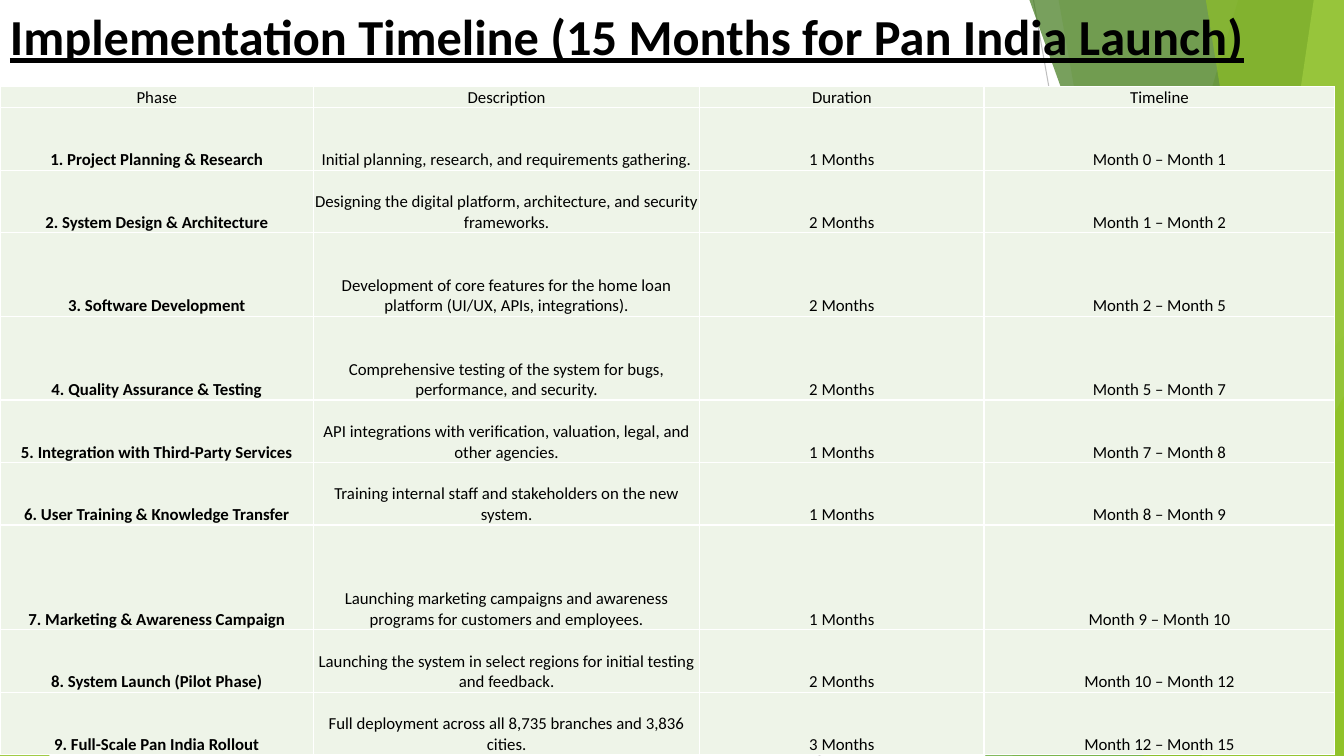
"""Build the implementation timeline slide: green facets, a title and a phase table."""
from lxml.etree import SubElement
from pptx import Presentation
from pptx.dml.color import RGBColor
from pptx.enum.shapes import MSO_CONNECTOR, MSO_SHAPE
from pptx.enum.text import MSO_ANCHOR, PP_ALIGN
from pptx.oxml.ns import qn
from pptx.util import Inches, Pt


def color(hex_string):
    return RGBColor.from_string(hex_string)


def format_font(font, size, bold, underline=False):
    values = {"name": "Calibri", "size": Pt(size), "bold": bold, "underline": underline}
    for name, value in values.items():
        setattr(font, name, value)
    font.color.rgb = color("000000")


presentation = Presentation()
presentation.slide_width = Inches(13.33)
presentation.slide_height = Inches(7.5)
slide = presentation.slides.add_slide(presentation.slide_layouts[6])

guide_lines = [
    ((10.25, 0), (11.58, 7.5), "BFBFBF"),
    ((13.33, 4.03), (8.12, 7.5), "D9D9D9"),
]
for start, end, line_color in guide_lines:
    points = [Inches(value) for value in start + end]
    connector = slide.shapes.add_connector(MSO_CONNECTOR.STRAIGHT, *points)
    connector.line.color.rgb = color(line_color)
    connector.line.width = Pt(0.75)
    SubElement(connector._element.spPr, qn("a:effectLst"))

# Bands give top-left and bottom-left x; triangles give box and apex position.
facets = [
    ("band", (12.28, 10.04), "90C226", 30),
    ("band", (10.5, 11.83), "90C226", 20),
    ("triangle", (9.77, 3.33, 3.56, 4.17, 1), "54A021", 72),
    ("band", (10.21, 12.91), "3F7819", 70),
    ("band", (13.03, 11.92), "C0E474", 70),
    ("band", (11.96, 13.18), "90C226", 65),
    ("triangle", (11.34, 3.93, 1.99, 3.57, 1), "90C226", 80),
    ("triangle", (0, 4.39, 0.49, 3.11, 0), "90C226", 85),
]
for kind, geometry, fill_color, opacity in facets:
    if kind == "band":
        top_x, bottom_x = geometry
        corners = [(13.33, 0), (13.33, 7.5), (bottom_x, 7.5)]
        builder = slide.shapes.build_freeform(Inches(top_x), 0)
        builder.add_line_segments([(Inches(x), Inches(y)) for x, y in corners])
        shape = builder.convert_to_shape()
    else:
        *box, apex = geometry
        shape = slide.shapes.add_shape(
            MSO_SHAPE.ISOSCELES_TRIANGLE, *[Inches(value) for value in box])
        shape.adjustments[0] = apex
    shape.shadow.inherit = False
    shape.line.fill.background()
    shape.fill.solid()
    shape.fill.fore_color.rgb = color(fill_color)
    fill_element = shape._element.spPr.find(qn("a:solidFill"))
    SubElement(fill_element[0], qn("a:alpha"), val=str(opacity * 1000))

title = slide.shapes.add_textbox(0, 0, Inches(13.24), Inches(1.26))
title.text_frame.word_wrap = True
title.text_frame.vertical_anchor = MSO_ANCHOR.TOP
paragraph = title.text_frame.paragraphs[0]
run = paragraph.add_run()
run.text = "Implementation Timeline (15 Months for Pan India Launch)"
format_font(run.font, 36, True, True)

column_widths = [3.11, 3.83, 2.82, 3.48]
row_heights = [0.21, 0.62, 0.62, 0.83, 0.83, 0.62, 0.62, 1.04, 0.62, 0.62]
timeline_rows = [
    ("Phase", "Description", "Duration", "Timeline"),
    ("1. Project Planning & Research",
     "Initial planning, research, and requirements gathering.",
     "1 Months", "Month 0 – Month 1"),
    ("2. System Design & Architecture",
     "Designing the digital platform, architecture, and security frameworks.",
     "2 Months", "Month 1 – Month 2"),
    ("3. Software Development",
     "Development of core features for the home loan platform (UI/UX, APIs, integrations).",
     "2 Months", "Month 2 – Month 5"),
    ("4. Quality Assurance & Testing",
     "Comprehensive testing of the system for bugs, performance, and security.",
     "2 Months", "Month 5 – Month 7"),
    ("5. Integration with Third-Party Services",
     "API integrations with verification, valuation, legal, and other agencies.",
     "1 Months", "Month 7 – Month 8"),
    ("6. User Training & Knowledge Transfer",
     "Training internal staff and stakeholders on the new system.",
     "1 Months", "Month 8 – Month 9"),
    ("7. Marketing & Awareness Campaign",
     "Launching marketing campaigns and awareness programs for customers and employees.",
     "1 Months", "Month 9 – Month 10"),
    ("8. System Launch (Pilot Phase)",
     "Launching the system in select regions for initial testing and feedback.",
     "2 Months", "Month 10 – Month 12"),
    ("9. Full-Scale Pan India Rollout",
     "Full deployment across all 8,735 branches and 3,836 cities.",
     "3 Months", "Month 12 – Month 15"),
]
table = slide.shapes.add_table(
    len(row_heights), len(column_widths),
    0, Inches(0.86), Inches(13.24), Inches(6.64)).table
table.first_row = False
table.horz_banding = False
for column, width in zip(table.columns, column_widths):
    column.width = Inches(width)
for row, height in zip(table.rows, row_heights):
    row.height = Inches(height)

cell_format = {
    "vertical_anchor": MSO_ANCHOR.BOTTOM,
    "margin_left": 0, "margin_right": 0, "margin_top": 0, "margin_bottom": 0,
}
for row_index, texts in enumerate(timeline_rows):
    for column_index, text in enumerate(texts):
        cell = table.cell(row_index, column_index)
        for name, value in cell_format.items():
            setattr(cell, name, value)
        paragraph = cell.text_frame.paragraphs[0]
        paragraph.alignment = PP_ALIGN.CENTER
        run = paragraph.add_run()
        run.text = text
        format_font(run.font, 12, row_index > 0 and column_index == 0)
        cell_properties = cell._tc.get_or_add_tcPr()
        for side in ("lnL", "lnR", "lnT", "lnB"):
            border = SubElement(cell_properties, qn(f"a:{side}"), w=str(Pt(1)))
            border_fill = SubElement(border, qn("a:solidFill"))
            SubElement(border_fill, qn("a:srgbClr"), val="FFFFFF")
        cell.fill.solid()
        cell.fill.fore_color.rgb = color("EEF4E8")

presentation.save("out.pptx")
